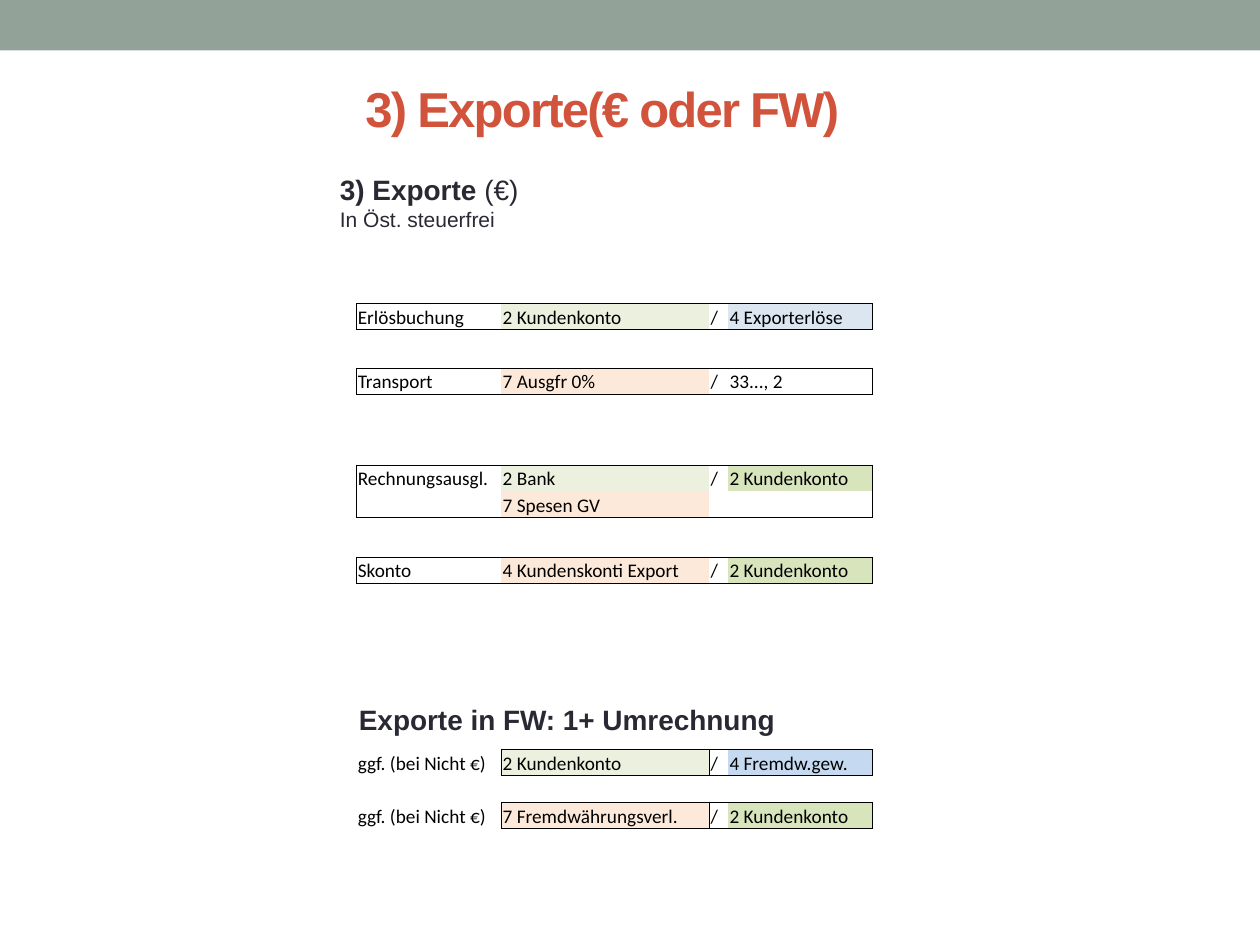
from collections import namedtuple

from lxml.etree import SubElement
from pptx import Presentation
from pptx.dml.color import RGBColor
from pptx.enum.shapes import MSO_SHAPE
from pptx.enum.text import MSO_ANCHOR, MSO_AUTO_SIZE, PP_ALIGN
from pptx.oxml.ns import qn
from pptx.util import Inches, Pt

# The slide is a grid of 100 columns by 75 rows of square units.
COLUMNS, ROWS = 100, 75
UNIT = Inches(0.1)

BAND = RGBColor(0x93, 0xA2, 0x99)
HEADING = RGBColor(0xD2, 0x53, 0x3C)
INK = RGBColor(0x29, 0x29, 0x34)
BLACK = RGBColor(0, 0, 0)
ASSET = RGBColor(0xEB, 0xF1, 0xDE)
CUSTOMER = RGBColor(0xD8, 0xE4, 0xBC)
EXPENSE = RGBColor(0xFD, 0xE9, 0xD9)
REVENUE = RGBColor(0xDC, 0xE6, 0xF1)
CURRENCY_GAIN = RGBColor(0xC5, 0xD9, 0xF1)

PLAIN_TABLE = "{2D5ABB26-0587-4C30-8999-92F81FD0307C}"
ENTRY_WIDTHS = (11.5, 16.5, 1.5, 11.45)
ENTRY_HEIGHT = 2.08
ENTRY_LEFT = 28.3

Box = namedtuple("Box", "left top width height")
Frame = namedtuple("Frame", "first_row last_row first_col")
Entry = namedtuple("Entry", "label debit debit_fill credit credit_fill",
                   defaults=(None, None))
SPACER = Entry(None, None, None)


def units(count):
    return int(count * UNIT)


def place(box):
    return [units(length) for length in box]


def add_run(paragraph, text, size, color, font="Arial", bold=False):
    run = paragraph.add_run()
    run.text = text
    run.font.name = font
    run.font.size = Pt(size)
    run.font.bold = bold
    run.font.color.rgb = color
    return run


def add_band(slide, box):
    band = slide.shapes.add_shape(MSO_SHAPE.RECTANGLE, *place(box))
    band.shadow.inherit = False
    band.fill.solid()
    band.fill.fore_color.rgb = BAND
    band.line.fill.background()


def add_title(slide, box, text):
    title = slide.shapes.title
    title.left, title.top, title.width, title.height = place(box)
    title.text_frame.vertical_anchor = MSO_ANCHOR.MIDDLE
    paragraph = title.text_frame.paragraphs[0]
    paragraph.alignment = PP_ALIGN.CENTER
    run = add_run(paragraph, text, 28, HEADING, bold=True)
    run.font._element.set("spc", "-100")


def add_section(slide, box, lines):
    """Each line is a list of (text, size, bold) runs."""
    frame = slide.shapes.add_textbox(*place(box)).text_frame
    frame.word_wrap = False
    frame.auto_size = MSO_AUTO_SIZE.SHAPE_TO_FIT_TEXT
    for number, line in enumerate(lines):
        paragraph = frame.add_paragraph() if number else frame.paragraphs[0]
        for text, size, bold in line:
            add_run(paragraph, text, size, INK, bold=bold)


def draw_borders(cell, row, col, frames):
    """Draw those edges of the cell that lie on the outline of a frame."""
    last_col = len(ENTRY_WIDTHS) - 1
    edges = set()
    for frame in frames:
        if not frame.first_row <= row <= frame.last_row:
            continue
        if col == frame.first_col - 1:
            edges.add("lnR")
        if col < frame.first_col:
            continue
        on_outline = {"lnL": col == frame.first_col, "lnR": col == last_col,
                      "lnT": row == frame.first_row,
                      "lnB": row == frame.last_row}
        edges.update(edge for edge, drawn in on_outline.items() if drawn)
    properties = cell._tc.get_or_add_tcPr()
    for edge in ("lnL", "lnR", "lnT", "lnB"):
        if edge in edges:
            line = SubElement(properties, qn(f"a:{edge}"), w=str(Pt(0.5)))
            fill = SubElement(line, qn("a:solidFill"))
            SubElement(fill, qn("a:srgbClr"), val=str(BLACK))


def fill_cell(cell, text, color):
    cell.vertical_anchor = MSO_ANCHOR.BOTTOM
    cell.margin_left = cell.margin_right = cell.margin_top = Inches(0.01)
    cell.margin_bottom = 0
    if color is None:
        cell.fill.background()
    else:
        cell.fill.solid()
        cell.fill.fore_color.rgb = color
    paragraph = cell.text_frame.paragraphs[0]
    if text:
        add_run(paragraph, text, 11, BLACK, font="Calibri")
    else:
        SubElement(paragraph._p, qn("a:endParaRPr"), sz="1100")


def add_entries(slide, left, top, entries, frames):
    box = Box(left, top, sum(ENTRY_WIDTHS), ENTRY_HEIGHT * len(entries))
    holder = slide.shapes.add_table(len(entries), len(ENTRY_WIDTHS), *place(box))
    table = holder.table
    table.first_row = table.horz_banding = False
    next(holder._element.iter(qn("a:tableStyleId"))).text = PLAIN_TABLE
    for column, width in zip(table.columns, ENTRY_WIDTHS):
        column.width = units(width)
    for row, entry in enumerate(entries):
        table.rows[row].height = units(ENTRY_HEIGHT)
        parts = ((entry.label, None), (entry.debit, entry.debit_fill),
                 ("/" if entry.credit else None, None),
                 (entry.credit, entry.credit_fill))
        for col, (text, color) in enumerate(parts):
            cell = table.cell(row, col)
            draw_borders(cell, row, col, frames)
            fill_cell(cell, text, color)


def add_euro_exports(slide, left):
    bookings = (
        (24.1, [Entry("Erlösbuchung", "2 Kundenkonto", ASSET,
                      "4 Exporterlöse", REVENUE)]),
        (29.2, [Entry("Transport", "7 Ausgfr 0%", EXPENSE, "33..., 2")]),
        (36.9, [Entry("Rechnungsausgl.", "2 Bank", ASSET,
                      "2 Kundenkonto", CUSTOMER),
                Entry(None, "7 Spesen GV", EXPENSE)]),
        (44.2, [Entry("Skonto", "4 Kundenskonti Export", EXPENSE,
                      "2 Kundenkonto", CUSTOMER)]),
    )
    for top, entries in bookings:
        add_entries(slide, left, top, entries, [Frame(0, len(entries) - 1, 0)])


def add_currency_exports(slide, left, top):
    label = "ggf. (bei Nicht €)"
    entries = [
        Entry(label, "2 Kundenkonto", ASSET, "4 Fremdw.gew.", CURRENCY_GAIN),
        SPACER,
        Entry(label, "7 Fremdwährungsverl.", EXPENSE,
              "2 Kundenkonto", CUSTOMER),
    ]
    add_entries(slide, left, top, entries, [Frame(0, 0, 1), Frame(2, 2, 1)])


def main():
    deck = Presentation()
    deck.slide_width, deck.slide_height = units(COLUMNS), units(ROWS)
    slide = deck.slides.add_slide(deck.slide_layouts.get_by_name("Title Only"))
    add_band(slide, Box(0, 0, COLUMNS, 4))
    add_title(slide, Box(0.9, 5, 93.8, 7.2), "3) Exporte(€ oder FW)")
    add_section(slide, Box(26, 13.2, 16.4, 5.7),
                [[("3) Exporte ", 16, True), ("(€)", 16, False)],
                 [("In Öst. steuerfrei", 12, False)]])
    add_euro_exports(slide, ENTRY_LEFT)
    add_section(slide, Box(27.5, 55.3, 35.5, 3.7),
                [[("Exporte in FW: 1+ Umrechnung", 16, True)]])
    add_currency_exports(slide, ENTRY_LEFT, 59.5)
    deck.save("out.pptx")


if __name__ == "__main__":
    main()
